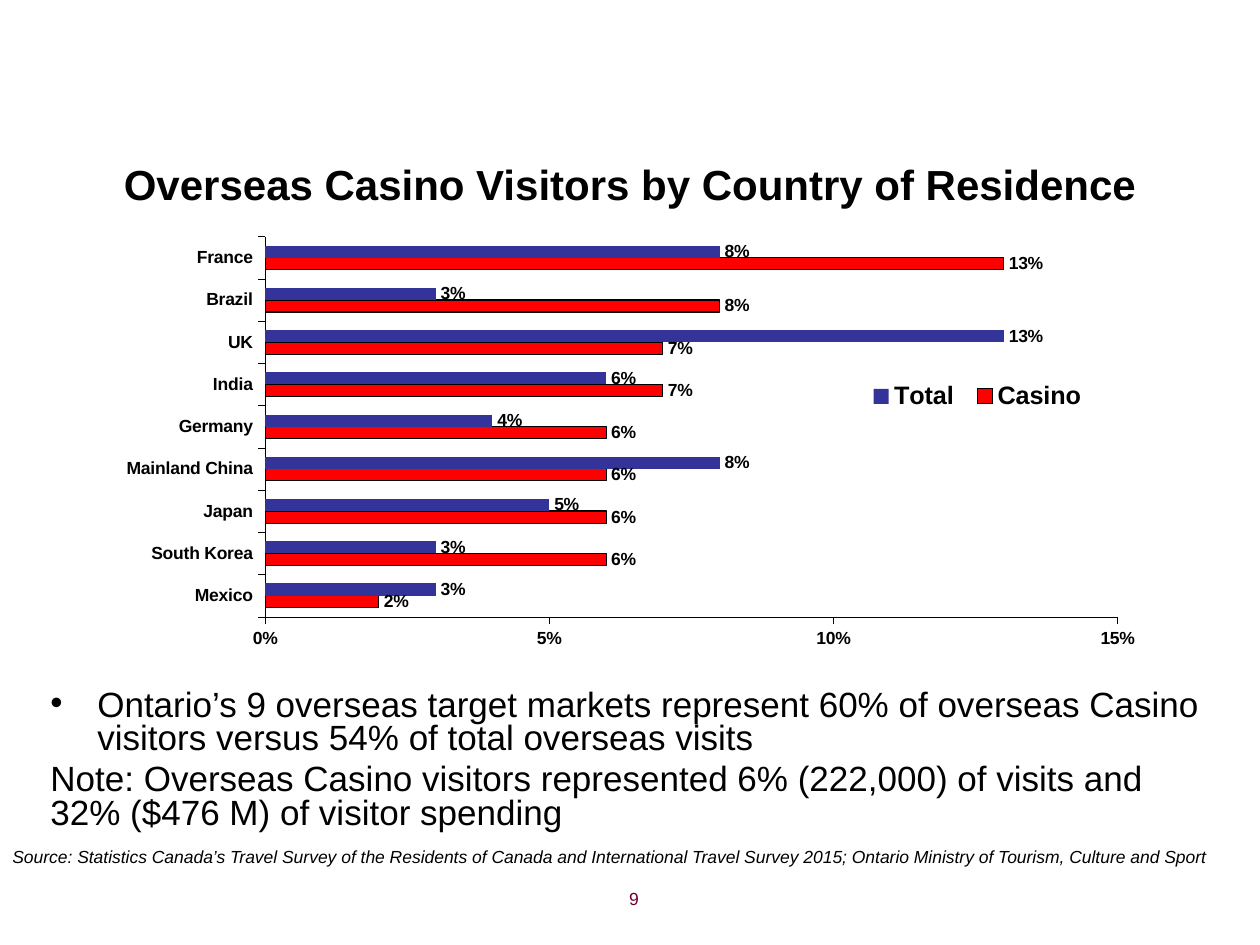
from lxml import etree
from pptx import Presentation
from pptx.chart.data import CategoryChartData
from pptx.dml.color import RGBColor
from pptx.enum.chart import XL_CHART_TYPE, XL_LABEL_POSITION, XL_LEGEND_POSITION, XL_TICK_MARK
from pptx.enum.text import MSO_ANCHOR, PP_ALIGN
from pptx.oxml.ns import qn
from pptx.util import Emu, Pt

PX = 914400 / 126
BLACK = RGBColor(0x00, 0x00, 0x00)
RED = RGBColor(0xFF, 0x00, 0x00)
BLUE = RGBColor(0x33, 0x33, 0x99)
PLUM = RGBColor(0x66, 0x00, 0x33)

COUNTRIES = ["Mexico", "South Korea", "Japan", "Mainland China", "Germany",
             "India", "UK", "Brazil", "France"]
CASINO = [0.02, 0.06, 0.06, 0.06, 0.06, 0.07, 0.07, 0.08, 0.13]
TOTAL = [0.03, 0.03, 0.05, 0.08, 0.04, 0.06, 0.13, 0.03, 0.08]


def px(length):
    return Emu(round(length * PX))


class SlideBuilder:
    font_name = "Arial"

    def __init__(self, page):
        self.page = page

    def style(self, font, size, color=BLACK, bold=False, italic=False):
        font.name = self.font_name
        font.size = Pt(size)
        font.color.rgb = color
        font.bold = bold
        font.italic = italic

    def text(self, frame, lines, size, align=PP_ALIGN.LEFT, anchor=MSO_ANCHOR.TOP,
             spacing=1.0, gap=0, **look):
        box = self.page.shapes.add_textbox(*map(px, frame))
        body = box.text_frame
        body.word_wrap = True
        body.vertical_anchor = anchor
        body.text = "\n".join(lines)
        for index, para in enumerate(body.paragraphs):
            para.alignment = align
            para.line_spacing = spacing
            if index:
                para.space_before = Pt(gap)
            for span in para.runs:
                self.style(span.font, size, **look)
        return body

    def bullet(self, para, indent):
        properties = para._p.get_or_add_pPr()
        properties.set("marL", str(px(indent)))
        properties.set("indent", str(-px(indent)))
        etree.SubElement(properties, qn("a:buFont")).set("typeface", self.font_name)
        etree.SubElement(properties, qn("a:buChar")).set("char", "•")

    def bar_chart(self, frame, categories, series):
        """Add a clustered bar chart from (name, values, fill, outline) series."""
        data = CategoryChartData(number_format="0%")
        data.categories = categories
        for name, values, _, _ in series:
            data.add_series(name, values)
        chart = self.page.shapes.add_chart(
            XL_CHART_TYPE.BAR_CLUSTERED, *map(px, frame), data).chart
        chart.has_title = False
        self.style(chart.font, 14.4, bold=True)
        plot = chart.plots[0]
        plot.gap_width = 150
        plot.overlap = 0
        plot.vary_by_categories = False
        for bars, (_, _, fill, outline) in zip(plot.series, series):
            self.bars(bars, fill, outline)
        for axis in (chart.category_axis, chart.value_axis):
            self.axis(axis)
        scale = chart.value_axis
        scale.minimum_scale, scale.maximum_scale, scale.major_unit = 0, 0.15, 0.05
        scale.tick_labels.number_format = "0%"
        scale.tick_labels.number_format_is_linked = False
        return chart

    def bars(self, bars, fill, outline):
        bars.invert_if_negative = False
        bars.format.fill.solid()
        bars.format.fill.fore_color.rgb = fill
        if outline is None:
            bars.format.line.fill.background()
        else:
            bars.format.line.color.rgb = outline
            bars.format.line.width = Pt(0.68)
        labels = bars.data_labels
        labels.show_value = True
        labels.number_format = "0%"
        labels.number_format_is_linked = False
        labels.position = XL_LABEL_POSITION.OUTSIDE_END
        self.style(labels.font, 10, bold=True)

    def axis(self, axis):
        axis.has_major_gridlines = False
        axis.major_tick_mark = XL_TICK_MARK.OUTSIDE
        axis.minor_tick_mark = XL_TICK_MARK.NONE
        axis.format.line.color.rgb = BLACK
        axis.format.line.width = Pt(0.17)
        self.style(axis.tick_labels.font, 10, bold=True)

    def legend(self, chart, fractions):
        chart.has_legend = True
        chart.legend.position = XL_LEGEND_POSITION.RIGHT
        chart.legend.include_in_layout = False
        self.style(chart.legend.font, 14.4, bold=True)
        element = chart.legend._element
        for old in element.findall(qn("c:layout")):
            element.remove(old)
        element.find(qn("c:legendPos")).addnext(self.layout(fractions))

    def plot_area(self, chart, fractions):
        area = chart._chartSpace.chart.plotArea
        for old in area.findall(qn("c:layout")):
            area.remove(old)
        area.insert(0, self.layout(fractions, inner=True))

    def layout(self, fractions, inner=False):
        """Return a manual layout for x, y, width, height as parts of the chart."""
        layout = etree.Element(qn("c:layout"))
        manual = etree.SubElement(layout, qn("c:manualLayout"))
        settings = [("layoutTarget", "inner")] if inner else []
        settings += [("xMode", "edge"), ("yMode", "edge")]
        settings += zip("xywh", fractions)
        for tag, value in settings:
            etree.SubElement(manual, qn(f"c:{tag}")).set("val", str(value))
        return layout


def main():
    deck = Presentation()
    deck.slide_width, deck.slide_height = px(1260), px(945)
    slide = SlideBuilder(deck.slides.add_slide(deck.slide_layouts[6]))

    slide.text((0, 147, 1260, 73), ["Overseas Casino Visitors by Country of Residence"],
               24, align=PP_ALIGN.CENTER, anchor=MSO_ANCHOR.MIDDLE, bold=True)
    body = slide.text(
        (38, 684, 1197, 168),
        ["Ontario’s 9 overseas target markets represent 60% of overseas Casino "
         "visitors versus 54% of total overseas visits",
         "Note: Overseas Casino visitors represented 6% (222,000) of visits and "
         "32% ($476 M) of visitor spending"],
        20, spacing=0.8, gap=4)
    slide.bullet(body.paragraphs[0], 47)

    chart = slide.bar_chart((71, 228, 1079, 432), COUNTRIES,
                            [("Casino", CASINO, RED, BLACK), ("Total", TOTAL, BLUE, None)])
    slide.plot_area(chart, (0.18, 0.02, 0.79, 0.88))
    slide.legend(chart, (0.73, 0.34, 0.22, 0.1))

    slide.text((357, 882, 294, 44), ["9"], 10, align=PP_ALIGN.RIGHT, color=PLUM)
    slide.text((0, 840, 1235, 34),
               ["Source: Statistics Canada’s Travel Survey of the Residents of Canada and "
                "International Travel Survey 2015; Ontario Ministry of Tourism, Culture and Sport"],
               10, italic=True)
    deck.save("out.pptx")


if __name__ == "__main__":
    main()
